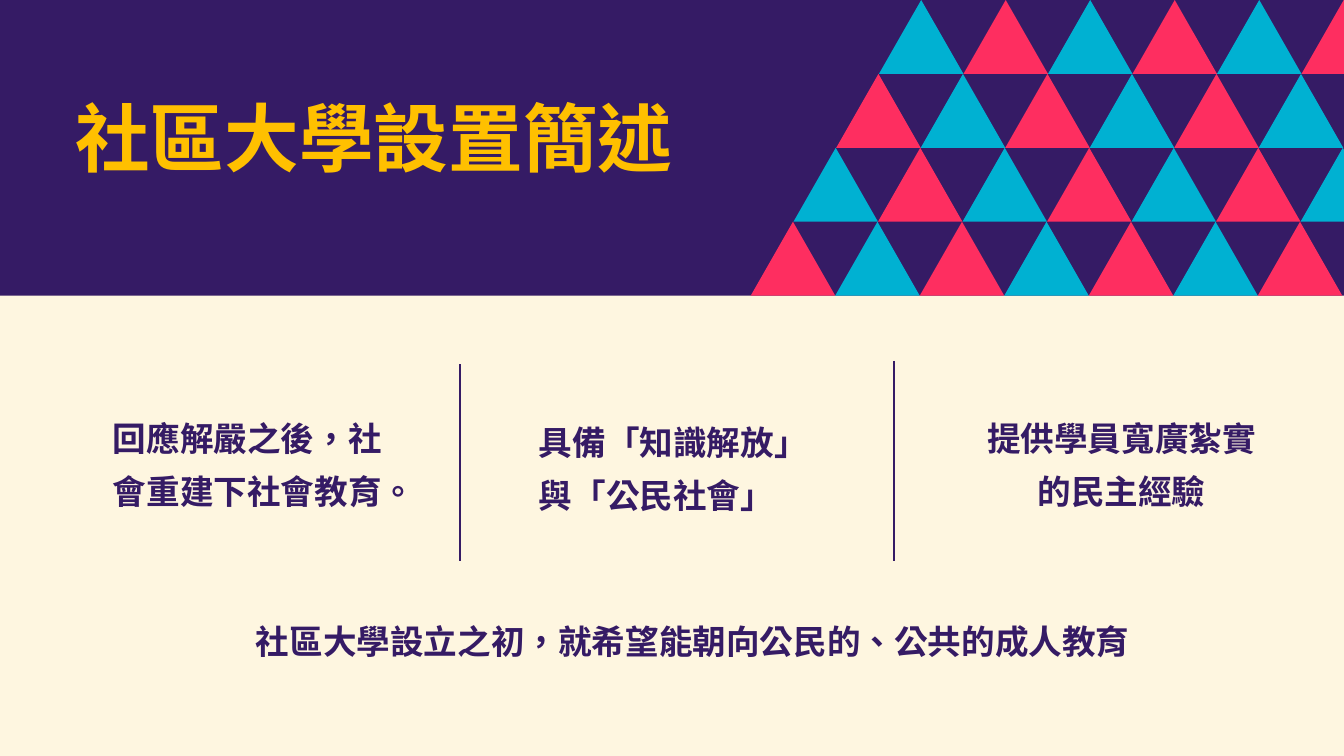
from lxml import etree
from pptx import Presentation
from pptx.dml.color import RGBColor
from pptx.enum.lang import MSO_LANGUAGE_ID as Language
from pptx.enum.shapes import MSO_CONNECTOR as Connector, MSO_SHAPE as Shape
from pptx.enum.text import PP_ALIGN as Align
from pptx.oxml.ns import qn
from pptx.util import Pt

COLOURS = {
    "cream": "FEF6E0",
    "purple": "351B65",
    "pink": "FE2E60",
    "blue": "00B1D2",
    "yellow": "FFC000",
}
WIDTH, HEIGHT = 1440, 810
ROW_HEIGHT, ROW_SHIFT, TRIANGLE_WIDTH = 79.2, 45.8, 90.55


def add_filled(shapes, kind, left, top, width, height, colour):
    shape = shapes.add_shape(kind, Pt(left), Pt(top), Pt(width), Pt(height))
    shape.shadow.inherit = False
    shape.fill.solid()
    shape.fill.fore_color.rgb = RGBColor.from_string(COLOURS[colour])
    shape.line.fill.background()


def add_text(area, lines, size, font_name, colour, align, spacing, insets):
    box = page.shapes.add_textbox(*map(Pt, area))
    frame = box.text_frame
    frame.word_wrap = True
    frame.margin_left = frame.margin_right = Pt(insets[0])
    frame.margin_top = frame.margin_bottom = Pt(insets[1])
    frame.text = "\n".join(lines)
    for para in frame.paragraphs:
        para.alignment = align
        para.line_spacing = spacing
        para.font.name = font_name
        para.font.size = Pt(size)
        para.font.bold = True
        para.font.language_id = Language.TRADITIONAL_CHINESE
        para.font.color.rgb = RGBColor.from_string(COLOURS[colour])
        latin = para._p.pPr.find(".//" + qn("a:latin"))
        east_asian = etree.Element(qn("a:ea"), typeface=font_name)
        latin.addnext(east_asian)


deck = Presentation()
deck.slide_width, deck.slide_height = Pt(WIDTH), Pt(HEIGHT)
page = deck.slides.add_slide(deck.slide_layouts[6])
page.background.fill.solid()
page.background.fill.fore_color.rgb = RGBColor.from_string(COLOURS["cream"])

add_filled(page.shapes, Shape.RECTANGLE, 0, 0, WIDTH, 4 * ROW_HEIGHT, "purple")

triangles = page.shapes.add_group_shape()
for row in range(4):
    for column in range(6 + row // 2):
        left = 941.76 - row * ROW_SHIFT + column * TRIANGLE_WIDTH
        colour = ("blue", "pink")[(row + column) % 2]
        add_filled(triangles.shapes, Shape.ISOSCELES_TRIANGLE, left,
                   row * ROW_HEIGHT, TRIANGLE_WIDTH, ROW_HEIGHT, colour)

add_text((80.64, 79.2, 887.76, 116.64), ["社區大學設置簡述"], 80,
         "Noto Sans CJK SC", "yellow", Align.LEFT, 1.2, (0, 0))

for x, top in ((492.48, 390.24), (958.32, 386.64)):
    divider = page.shapes.add_connector(Connector.STRAIGHT, Pt(x), Pt(top), Pt(x), Pt(601.2))
    divider.line.color.rgb = RGBColor.from_string(COLOURS["purple"])
    divider.line.width = Pt(2.25)
    etree.SubElement(divider._element.spPr, qn("a:effectLst"))

statements = [
    ((120.96, 434.88, 295.92, 113.76), ["回應解嚴之後，社會重建下社會教育。"], Align.LEFT, 1.3, (0, 0)),
    ((577.44, 439.2, 295.92, 113.76), ["具備「知識解放」與「公民社會」"], Align.LEFT, 1.3, (0, 0)),
    ((976.32, 434.88, 450.72, 113.76), ["提供學員寬廣紮實", "的民主經驗"], Align.CENTER, 1.3, (0, 0)),
    ((267.12, 661.68, 990, 51.12), ["社區大學設立之初，就希望能朝向公民的、公共的成人教育"], Align.LEFT, 1.0, (7.2, 3.6)),
]
for area, lines, align, spacing, insets in statements:
    add_text(area, lines, 36, "Arial", "purple", align, spacing, insets)

deck.save("out.pptx")
